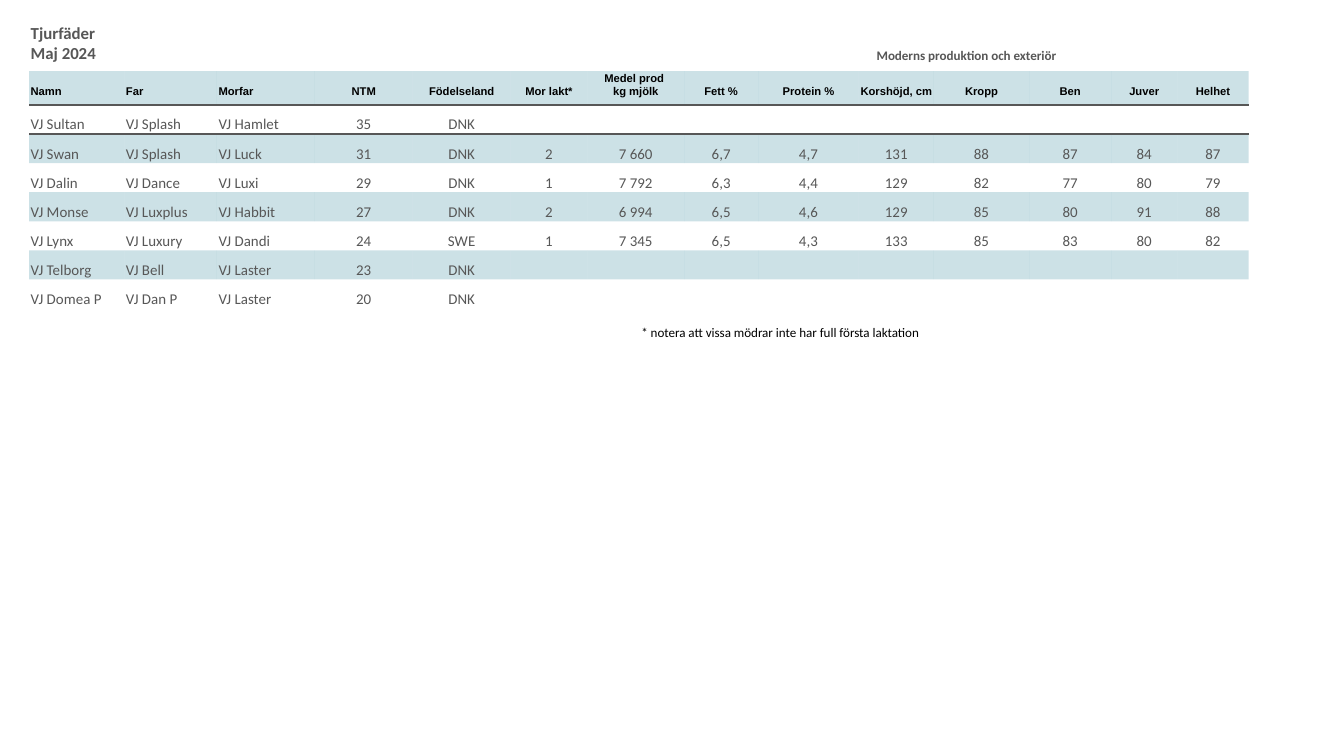
from lxml import etree
from pptx import Presentation
from pptx.dml.color import RGBColor
from pptx.enum.text import MSO_ANCHOR, PP_ALIGN
from pptx.oxml.ns import qn
from pptx.util import Cm, Pt

BOTTOM = MSO_ANCHOR.BOTTOM
LEFT, CENTER = PP_ALIGN.LEFT, PP_ALIGN.CENTER

TEAL = RGBColor(0x00, 0x6B, 0x85)
GREY = RGBColor(0x57, 0x57, 0x57)
BLACK = RGBColor(0x00, 0x00, 0x00)

NO_STYLE = "{2D5ABB26-0587-4C30-8999-92F81FD0307C}"
TEAL_OPACITY = 20000  # thousandths of a percent

TITLE = "Tjurfäder\vMaj 2024"
DAM_HEADING = "Moderns produktion och exteriör"
FOOTNOTE = "* notera att vissa mödrar inte har full första laktation"

COLUMNS = [  # heading, width in cm
    ("Namn", 1.8), ("Far", 1.75), ("Morfar", 1.85), ("NTM", 1.85),
    ("Födelseland", 1.85), ("Mor lakt*", 1.45), ("Medel prod \vkg mjölk", 1.83),
    ("Fett %", 1.4), ("Protein %", 1.9), ("Korshöjd, cm", 1.42), ("Kropp", 1.8),
    ("Ben", 1.55), ("Juver", 1.25), ("Helhet", 1.35),
]
NAME_COLUMNS = 3  # left-aligned columns
DAM_COLUMN = 7  # first column under the dam heading

BULLS = [
    ("VJ Sultan", "VJ Splash", "VJ Hamlet", "35", "DNK"),
    ("VJ Swan", "VJ Splash", "VJ Luck", "31", "DNK",
     "2", "7 660", "6,7", "4,7", "131", "88", "87", "84", "87"),
    ("VJ Dalin", "VJ Dance", "VJ Luxi", "29", "DNK",
     "1", "7 792", "6,3", "4,4", "129", "82", "77", "80", "79"),
    ("VJ Monse", "VJ Luxplus", "VJ Habbit", "27", "DNK",
     "2", "6 994", "6,5", "4,6", "129", "85", "80", "91", "88"),
    ("VJ Lynx", "VJ Luxury", "VJ Dandi", "24", "SWE",
     "1", "7 345", "6,5", "4,3", "133", "85", "83", "80", "82"),
    ("VJ Telborg", "VJ Bell", "VJ Laster", "23", "DNK"),
    ("VJ Domea P", "VJ Dan P", "VJ Laster", "20", "DNK"),
]
TITLE_HEIGHT, HEADER_HEIGHT, ROW_HEIGHT = 0.91, 0.64, 0.55


def add_plain_table(page, left, top, widths, heights):
    """Add a table without style, with sizes in cm."""
    frame = page.shapes.add_table(len(heights), len(widths), Cm(left), Cm(top),
                                  Cm(sum(widths)), Cm(sum(heights)))
    table = frame.table
    table.first_row = table.horz_banding = False
    frame._element.find(".//" + qn("a:tableStyleId")).text = NO_STYLE
    for column, width in zip(table.columns, widths):
        column.width = Cm(width)
    for row, height in zip(table.rows, heights):
        row.height = Cm(height)
    return table


def write_cell(cell, text, size, font="Calibri", color=GREY, bold=False,
               align=LEFT, bottom=0.13, filled=False):
    cell.vertical_anchor = BOTTOM
    cell.margin_left = cell.margin_right = cell.margin_top = Cm(0.03)
    cell.margin_bottom = Cm(bottom)
    if filled:
        cell.fill.solid()
        cell.fill.fore_color.rgb = TEAL
        tint = cell._tc.find(".//" + qn("a:srgbClr"))
        etree.SubElement(tint, qn("a:alpha"), val=str(TEAL_OPACITY))
    else:
        cell.fill.background()
    cell.text_frame.text = text
    para = cell.text_frame.paragraphs[0]
    para.alignment = align
    for span in para.runs:
        span.font.name = font
        span.font.size = Pt(size)
        span.font.bold = bold
        span.font.color.rgb = color
    # Keeps empty cells from stretching their row
    etree.SubElement(para._p, qn("a:endParaRPr"), sz=str(size * 100))


def add_rule(cell, side):
    """Draw a 1 pt border on one side: lnT or lnB."""
    line = etree.Element(qn("a:" + side), w=str(Pt(1)))
    fill = etree.SubElement(line, qn("a:solidFill"))
    etree.SubElement(fill, qn("a:srgbClr"), val=str(GREY))
    cell._tc.get_or_add_tcPr().insert(0, line)


def add_bull_table(page, left, top):
    widths = [width for _, width in COLUMNS]
    heights = [TITLE_HEIGHT, HEADER_HEIGHT] + [ROW_HEIGHT] * len(BULLS)
    table = add_plain_table(page, left, top, widths, heights)
    last = len(COLUMNS) - 1

    # Title row
    for index in range(len(COLUMNS)):
        write_cell(table.cell(0, index), "", 7)
    for first, end in ((0, 1), (5, 6), (DAM_COLUMN, last)):
        table.cell(0, first).merge(table.cell(0, end))
    write_cell(table.cell(0, 0), TITLE, 9, bold=True)
    write_cell(table.cell(0, DAM_COLUMN), DAM_HEADING, 7, bold=True, align=CENTER)

    for index, (heading, _) in enumerate(COLUMNS):
        align = LEFT if index < NAME_COLUMNS else CENTER
        # Column heading
        write_cell(table.cell(1, index), heading, 6, "Arial", BLACK, True,
                   align, filled=True)
        # Bulls, every second row tinted
        for number, bull in enumerate(BULLS):
            text = bull[index] if index < len(bull) else ""
            write_cell(table.cell(number + 2, index), text, 8, align=align,
                       bottom=0, filled=number % 2 == 1)
        # Rule under the headings
        add_rule(table.cell(1, index), "lnB")
        add_rule(table.cell(2, index), "lnT")


def add_footnote(page, left, top, width, height):
    table = add_plain_table(page, left, top, [width], [height])
    write_cell(table.cell(0, 0), FOOTNOTE, 7, color=BLACK)


def main():
    deck = Presentation()
    deck.slide_width, deck.slide_height = Cm(25.4), Cm(14.29)
    page = deck.slides.add_slide(deck.slide_layouts[6])
    add_bull_table(page, 0.55, 0.41)
    add_footnote(page, 12.09, 6.02, 9.09, 0.55)
    deck.save("out.pptx")


if __name__ == "__main__":
    main()
